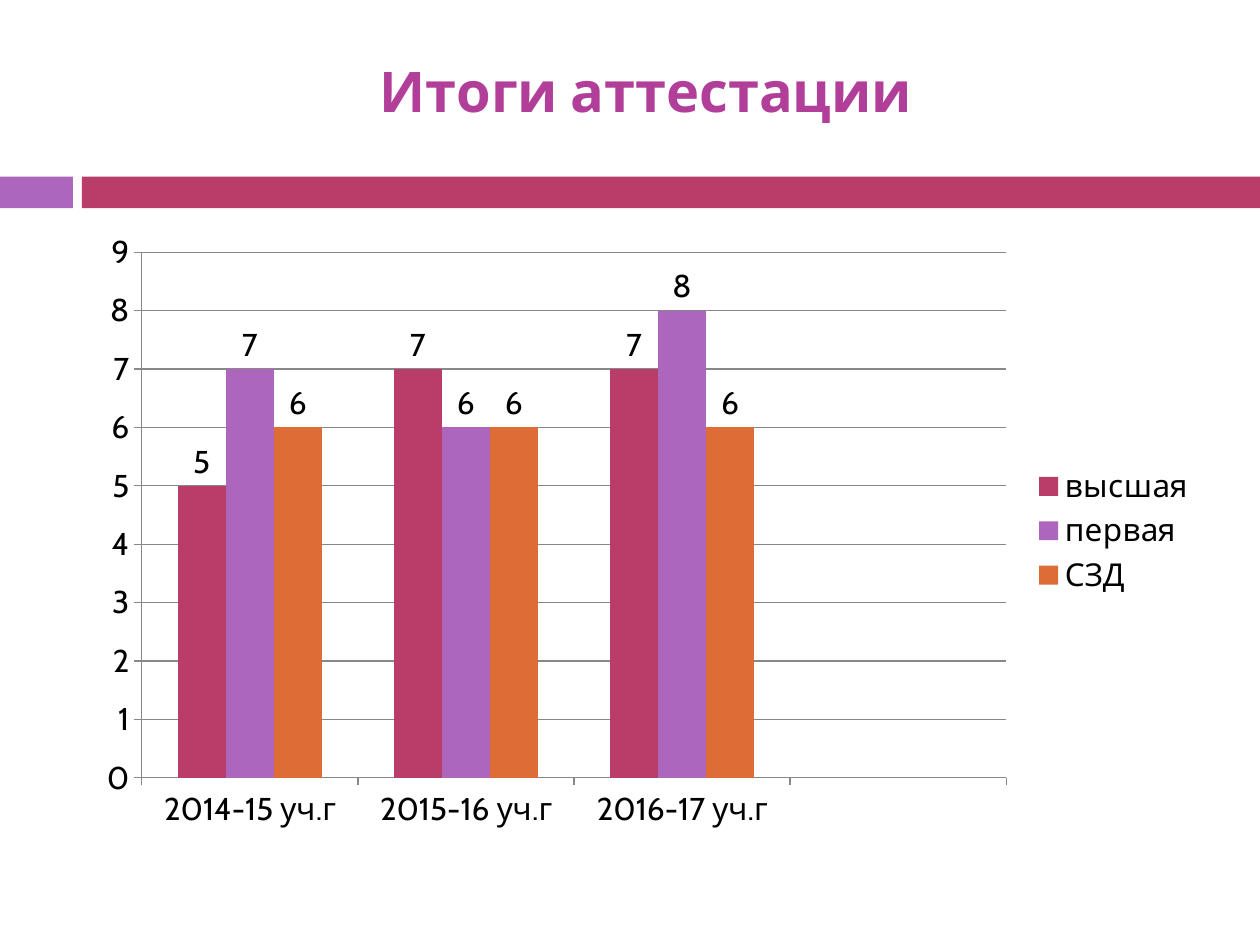
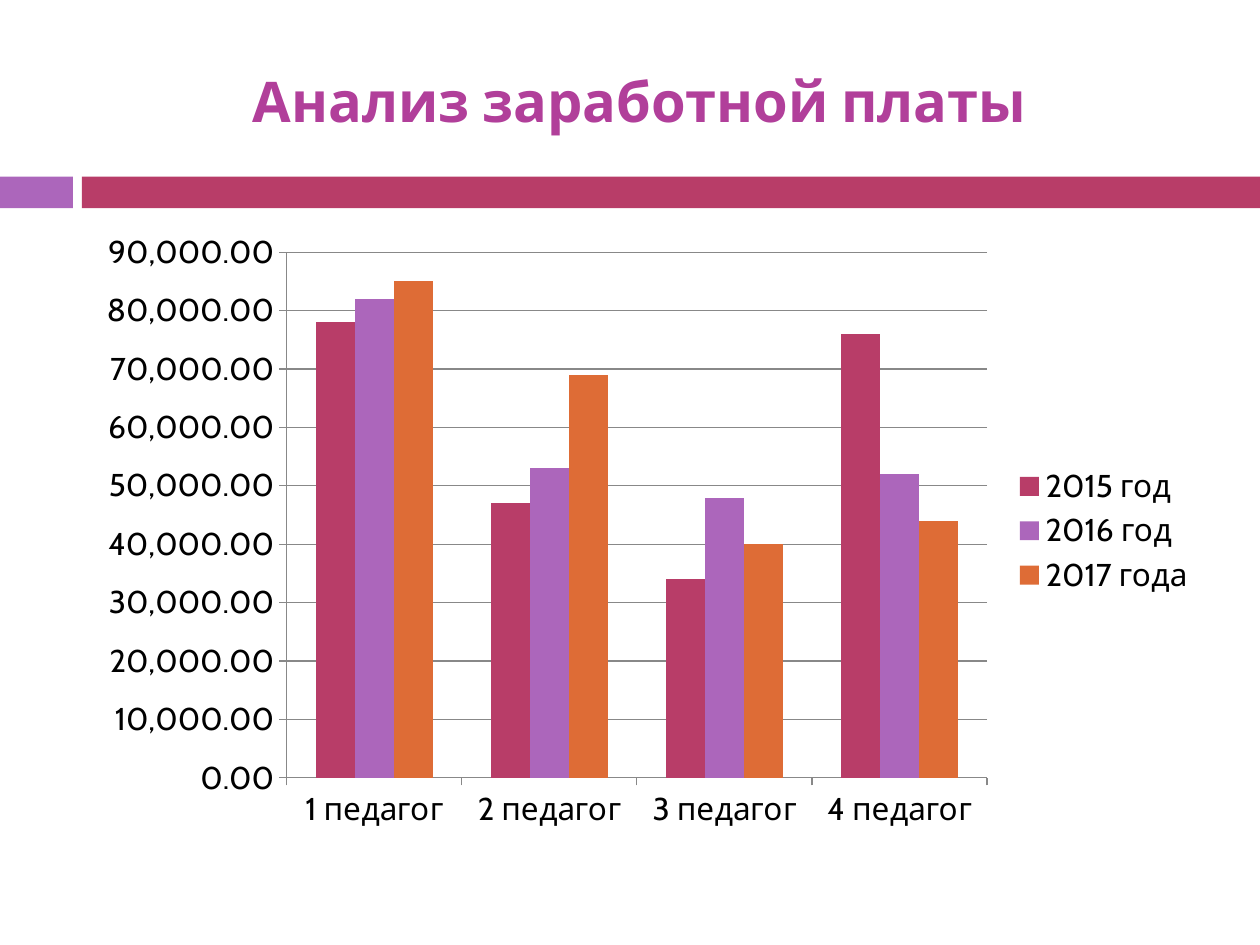
"""Builds two slides on teacher certification and pay, each with a clustered column chart."""
from dataclasses import dataclass
from typing import Optional

from pptx import Presentation
from pptx import util as u
from pptx.chart import data
from pptx.chart.chart import Chart
from pptx.dml.color import RGBColor
from pptx.enum import chart as charts, shapes, text
from pptx.slide import Slide


@dataclass(frozen=True)
class Theme:
    font: str = "Cabin"
    title_size: u.Length = u.Pt(32)
    chart_size: u.Length = u.Pt(18)
    title: RGBColor = RGBColor(0xB1, 0x3F, 0x9A)
    crimson: RGBColor = RGBColor(0xB8, 0x3D, 0x68)
    violet: RGBColor = RGBColor(0xAC, 0x66, 0xBB)
    orange: RGBColor = RGBColor(0xDE, 0x6C, 0x36)
    ink: RGBColor = RGBColor(0, 0, 0)
    grid: RGBColor = RGBColor(0x88, 0x88, 0x88)


THEME = Theme()
SERIES_COLORS = (THEME.crimson, THEME.violet, THEME.orange)
LEFT, CONTENT_WIDTH = u.Cm(1.7), u.Cm(22.65)
TITLE_TOP = u.Cm(0.64)
CHART_TOP, CHART_HEIGHT = u.Cm(4.45), u.Cm(12.5)
BAND_TOP, BAND_HEIGHT = u.Cm(3.56), u.Cm(0.64)


@dataclass(frozen=True)
class Band:
    left: u.Length
    width: u.Length
    color: RGBColor


@dataclass(frozen=True)
class Series:
    name: str
    values: tuple[Optional[int], ...]


@dataclass(frozen=True)
class ChartPage:
    title: str
    title_height: u.Length
    categories: tuple[str, ...]
    series: tuple[Series, ...]
    axis_step: int
    number_format: str
    labelled: bool


BANDS = (
    Band(u.Cm(0), u.Cm(1.47), THEME.violet),
    Band(u.Cm(1.65), u.Cm(23.75), THEME.crimson),
)

PAGES = (
    ChartPage(
        "Итоги аттестации", u.Cm(2.34),
        ("2014-15 уч.г", "2015-16 уч.г", "2016-17 уч.г", ""),
        (
            Series("высшая", (5, 7, 7, None)),
            Series("первая", (7, 6, 8, None)),
            Series("СЗД", (6, 6, 6, None)),
        ),
        axis_step=1, number_format="General", labelled=True,
    ),
    ChartPage(
        "Анализ заработной платы ", u.Cm(2.74),
        tuple(f"{number} педагог" for number in range(1, 5)),
        (
            Series("2015 год", (78000, 47000, 34000, 76000)),
            Series("2016 год", (82000, 53000, 48000, 52000)),
            Series("2017 года", (85000, 69000, 40000, 44000)),
        ),
        axis_step=10000, number_format="#,##0.00", labelled=False,
    ),
)


def add_title(page: Slide, content: ChartPage) -> None:
    """Place and format the title placeholder."""
    box = page.shapes.title
    box.left, box.top = LEFT, TITLE_TOP
    box.width, box.height = CONTENT_WIDTH, content.title_height
    frame = box.text_frame
    frame.auto_size = text.MSO_AUTO_SIZE.NONE
    frame.vertical_anchor = text.MSO_ANCHOR.MIDDLE
    para = frame.paragraphs[0]
    para.alignment = text.PP_ALIGN.CENTER
    span = para.add_run()
    span.text = content.title
    span.font.name, span.font.size = THEME.font, THEME.title_size
    span.font.bold = True
    span.font.color.rgb = THEME.title


def add_band(page: Slide, band: Band) -> None:
    """Draw one part of the strip under the title."""
    box = page.shapes.add_shape(
        shapes.MSO_SHAPE.RECTANGLE, band.left, BAND_TOP, band.width, BAND_HEIGHT)
    box.shadow.inherit = False
    box.fill.solid()
    box.fill.fore_color.rgb = band.color
    box.line.fill.background()


def format_axes(chart: Chart, content: ChartPage) -> None:
    """Set the scale, ticks and lines of both axes."""
    value_axis, category_axis = chart.value_axis, chart.category_axis
    value_axis.minimum_scale = 0
    value_axis.maximum_scale = 9 * content.axis_step
    value_axis.major_unit = content.axis_step
    value_axis.tick_labels.number_format = content.number_format
    value_axis.tick_labels.number_format_is_linked = False
    value_axis.has_major_gridlines = True
    for axis in (value_axis, category_axis):
        axis.major_tick_mark = charts.XL_TICK_MARK.OUTSIDE
        axis.minor_tick_mark = charts.XL_TICK_MARK.NONE
    for owner in (value_axis, category_axis, value_axis.major_gridlines):
        owner.format.line.color.rgb = THEME.grid
        owner.format.line.width = u.Pt(0.75)


def add_chart(page: Slide, content: ChartPage) -> None:
    """Add the column chart with its legend and labels."""
    chart_data = data.CategoryChartData(number_format=content.number_format)
    chart_data.categories = content.categories
    for series in content.series:
        chart_data.add_series(series.name, series.values)
    chart = page.shapes.add_chart(
        charts.XL_CHART_TYPE.COLUMN_CLUSTERED,
        LEFT, CHART_TOP, CONTENT_WIDTH, CHART_HEIGHT, chart_data).chart
    chart.font.name, chart.font.size = THEME.font, THEME.chart_size
    chart.font.color.rgb = THEME.ink
    chart.has_title = False
    chart.has_legend = True
    chart.legend.position = charts.XL_LEGEND_POSITION.RIGHT
    chart.legend.include_in_layout = False
    format_axes(chart, content)

    plot = chart.plots[0]
    plot.gap_width = 150
    plot.vary_by_categories = False
    for series, color in zip(plot.series, SERIES_COLORS):
        series.invert_if_negative = False
        series.format.fill.solid()
        series.format.fill.fore_color.rgb = color
        if content.labelled:
            series.data_labels.show_value = True
            series.data_labels.position = charts.XL_LABEL_POSITION.OUTSIDE_END


def main() -> None:
    """Build and save the deck."""
    deck = Presentation()
    deck.slide_width, deck.slide_height = u.Cm(25.4), u.Cm(19.05)
    title_only = deck.slide_layouts.get_by_name("Title Only")
    for content in PAGES:
        page = deck.slides.add_slide(title_only)
        for band in BANDS:
            add_band(page, band)
        add_title(page, content)
        add_chart(page, content)
    deck.save("out.pptx")


if __name__ == "__main__":
    main()
